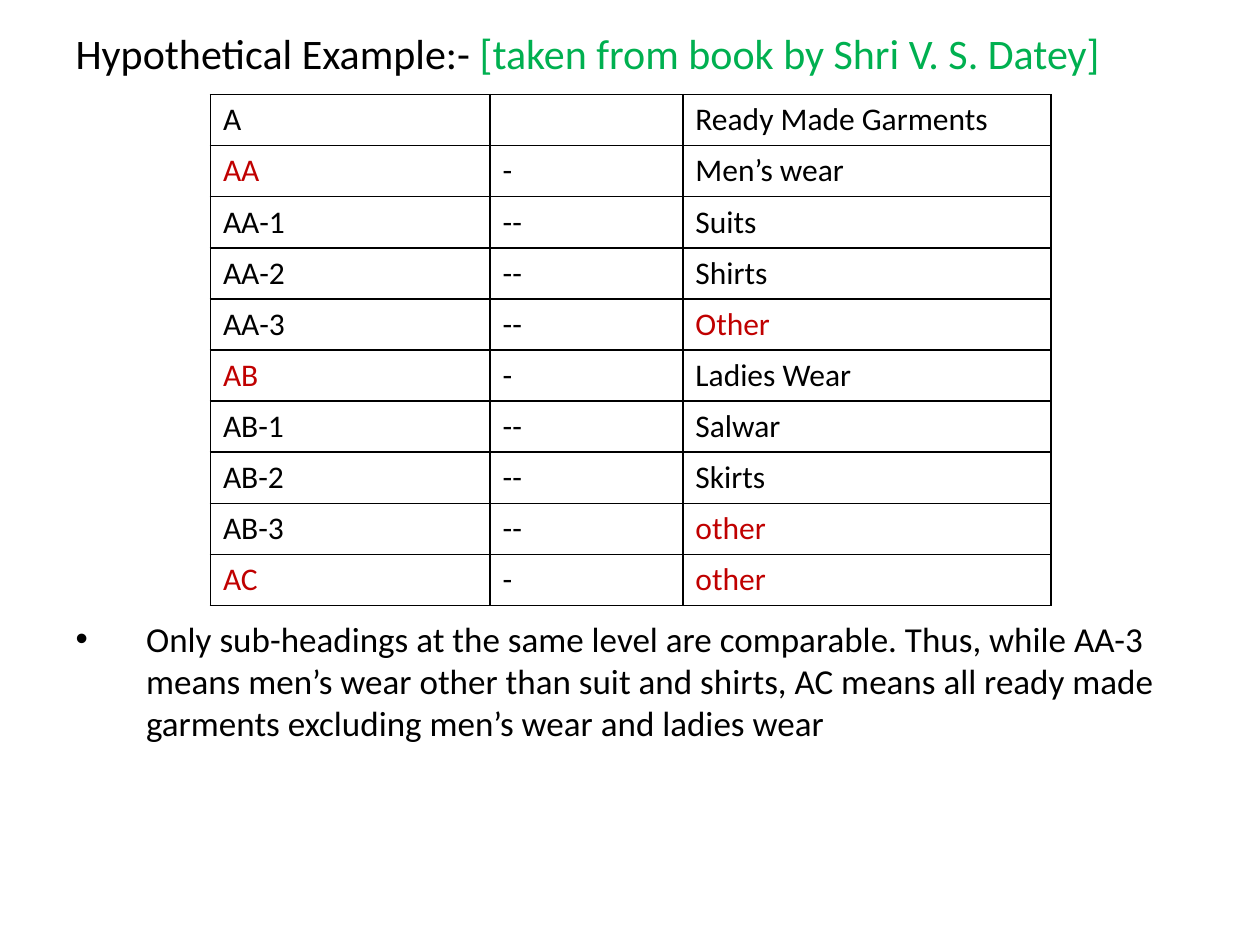
"""Build a slide that explains sub-heading levels with a tariff table and a note."""
from dataclasses import dataclass

from lxml import etree
from pptx import Presentation
from pptx.dml.color import RGBColor
from pptx.enum.text import MSO_AUTO_SIZE
from pptx.oxml.ns import qn
from pptx.util import Inches, Pt

NO_AUTOFIT = MSO_AUTO_SIZE.NONE


@dataclass(frozen=True)
class Theme:
    font: str = "Calibri"
    text: str = "000000"
    source: str = "00B050"
    accent: str = "C00000"
    heading_size: int = 24
    note_size: int = 20
    cell_size: int = 18
    border_width: int = 1


@dataclass(frozen=True)
class Entry:
    code: str
    level: str
    goods: str
    code_accent: bool = False
    goods_accent: bool = False


THEME = Theme()
COL_WIDTHS = (2.22, 1.53, 2.92)
ROW_HEIGHT = 0.4
HANGING = 0.56
NOTE_GAP = 308
HEADING = (
    ("Hypothetical Example:- ", THEME.text),
    ("[taken from book by Shri V. S. Datey]", THEME.source),
)
NOTE = (
    ("Only sub-headings at the same level are comparable. Thus, while AA-3 "
     "means men’s wear other than suit and shirts, AC means all ready made "
     "garments excluding men’s wear and ladies wear", THEME.text),
)
ENTRIES = (
    Entry("A", "", "Ready Made Garments"),
    Entry("AA", "-", "Men’s wear", code_accent=True),
    Entry("AA-1", "--", "Suits"),
    Entry("AA-2", "--", "Shirts"),
    Entry("AA-3", "--", "Other", goods_accent=True),
    Entry("AB", "-", "Ladies Wear", code_accent=True),
    Entry("AB-1", "--", "Salwar"),
    Entry("AB-2", "--", "Skirts"),
    Entry("AB-3", "--", "other", goods_accent=True),
    Entry("AC", "-", "other", code_accent=True, goods_accent=True),
)


def style_font(font, size: int, color: str) -> None:
    font.name = THEME.font
    font.size = Pt(size)
    font.color.rgb = RGBColor.from_string(color)


def write_paragraph(p, runs: tuple, size: int, bullet: bool) -> None:
    for text, color in runs:
        r = p.add_run()
        r.text = text
        style_font(r.font, size, color)
    pPr = p._p.get_or_add_pPr()
    pPr.set("marL", str(Inches(HANGING)))
    pPr.set("indent", str(-Inches(HANGING)))
    if bullet:
        etree.SubElement(pPr, qn("a:buChar")).set("char", "•")
    else:
        etree.SubElement(pPr, qn("a:buNone"))


def add_body(s) -> None:
    title, body = s.placeholders
    title._element.getparent().remove(title._element)
    body.left, body.top = Inches(0.5), Inches(0.17)
    body.width, body.height = Inches(9), Inches(7.17)
    tf = body.text_frame
    tf.auto_size = NO_AUTOFIT
    write_paragraph(tf.paragraphs[0], HEADING, THEME.heading_size, bullet=False)
    p = tf.add_paragraph()
    p.space_before = Pt(NOTE_GAP)
    write_paragraph(p, NOTE, THEME.note_size, bullet=True)


def add_borders(cell) -> None:
    tcPr = cell._tc.get_or_add_tcPr()
    for side in ("lnL", "lnR", "lnT", "lnB"):
        ln = etree.SubElement(tcPr, qn(f"a:{side}"), w=str(Pt(THEME.border_width)))
        fill = etree.SubElement(ln, qn("a:solidFill"))
        etree.SubElement(fill, qn("a:srgbClr"), val=THEME.text)


def fill_cell(cell, text: str, accent: bool) -> None:
    add_borders(cell)
    cell.fill.background()
    p = cell.text_frame.paragraphs[0]
    p.text = text
    color = THEME.accent if accent else THEME.text
    for r in p.runs:
        style_font(r.font, THEME.cell_size, color)


def add_entries(s) -> None:
    frame = s.shapes.add_table(
        len(ENTRIES), len(COL_WIDTHS), Inches(1.67), Inches(0.75),
        Inches(sum(COL_WIDTHS)), Inches(ROW_HEIGHT * len(ENTRIES)))
    table = frame.table
    table.first_row = table.horz_banding = False
    for col, width in zip(table.columns, COL_WIDTHS):
        col.width = Inches(width)
    for row, entry in zip(table.rows, ENTRIES):
        code, level, goods = row.cells
        fill_cell(code, entry.code, entry.code_accent)
        fill_cell(level, entry.level, False)
        fill_cell(goods, entry.goods, entry.goods_accent)


def main() -> None:
    prs = Presentation()
    prs.slide_width, prs.slide_height = Inches(10), Inches(7.5)
    s = prs.slides.add_slide(prs.slide_layouts[1])
    add_body(s)
    add_entries(s)
    prs.save("out.pptx")


if __name__ == "__main__":
    main()
